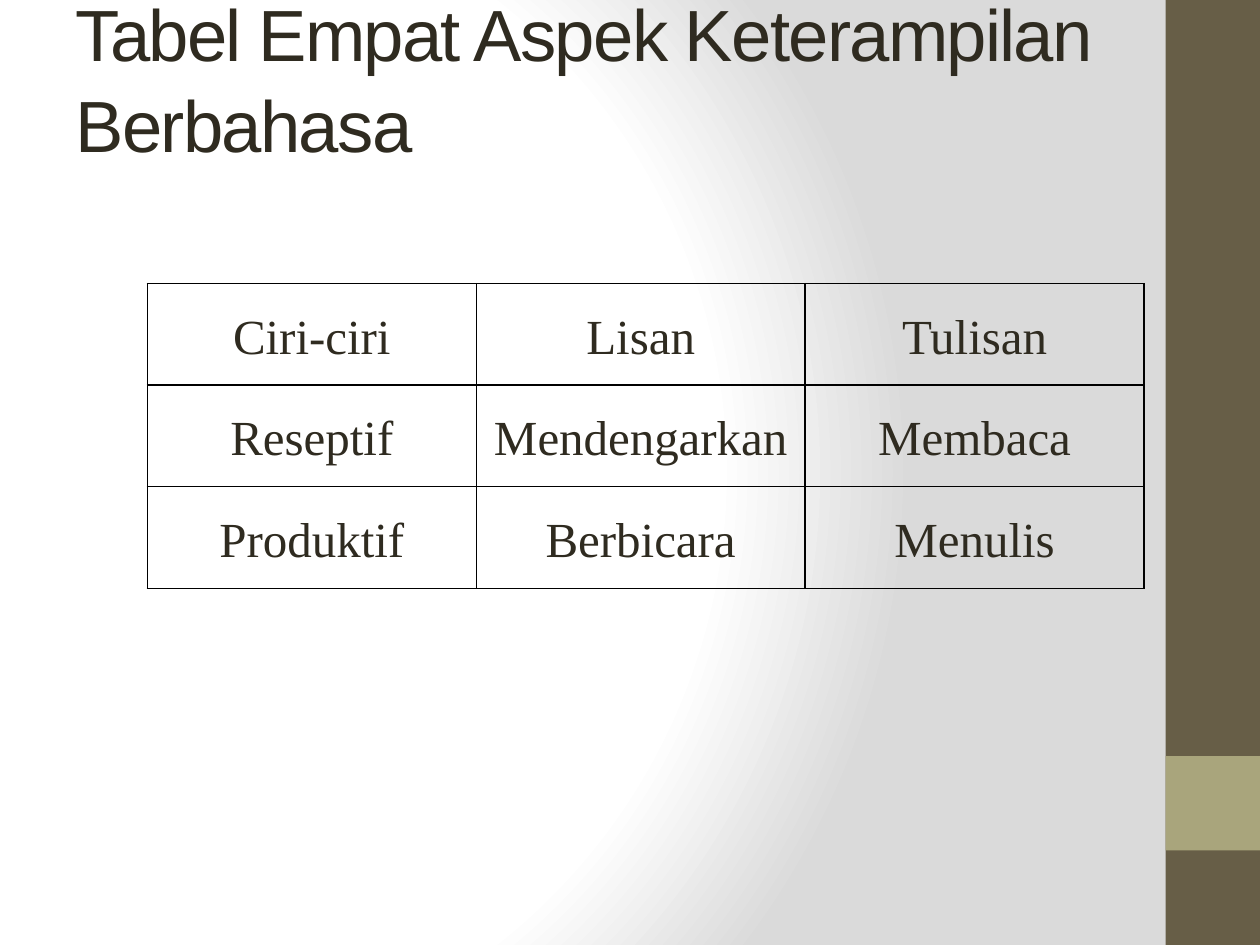
from dataclasses import dataclass

from lxml import etree
from pptx import Presentation
from pptx.dml.color import RGBColor
from pptx.enum.shapes import MSO_SHAPE
from pptx.enum.text import MSO_ANCHOR, PP_ALIGN
from pptx.oxml import parse_xml
from pptx.oxml.ns import qn
from pptx.util import Inches, Pt

RECT = MSO_SHAPE.RECTANGLE
MIDDLE = MSO_ANCHOR.MIDDLE
LEFT, CENTER = PP_ALIGN.LEFT, PP_ALIGN.CENTER
TITLE_ONLY = 5
SPACE = "http://schemas.openxmlformats.org/drawingml/2006/main"


@dataclass(frozen=True)
class Theme:
    ink: str = "2F2B20"
    band: str = "675E47"
    accent: str = "A9A57C"
    border: str = "000000"
    glow: tuple = ((0, "FFFFFF"), (75, "FFFFFF"), (100, "DADADA"))
    head: str = "Arial"
    body: str = "Times New Roman"
    head_size: float = 41.4
    body_size: float = 28


THEME = Theme()
ROWS = [
    ["Ciri-ciri", "Lisan", "Tulisan"],
    ["Reseptif", "Mendengarkan", "Membaca"],
    ["Produktif", "Berbicara", "Menulis"],
]


def set_font(para, name, size):
    font = para.font
    font.name, font.size = name, Pt(size)
    font.color.rgb = RGBColor.from_string(THEME.ink)


def add_glow(slide):
    fill = slide.background.fill
    fill.solid()
    stops = "".join(
        f'<a:gs pos="{pos * 1000}"><a:srgbClr val="{color}"/></a:gs>'
        for pos, color in THEME.glow
    )
    grad = parse_xml(
        f'<a:gradFill xmlns:a="{SPACE}" rotWithShape="1"><a:gsLst>{stops}</a:gsLst>'
        '<a:path path="circle">'
        '<a:fillToRect l="20000" t="50000" r="100000" b="50000"/>'
        "</a:path></a:gradFill>"
    )
    solid = next(slide.background._cSld.iter(qn("a:solidFill")))
    solid.getparent().replace(solid, grad)


def add_block(slide, left, top, width, height, color):
    block = slide.shapes.add_shape(
        RECT, Inches(left), Inches(top), Inches(width), Inches(height)
    )
    block.shadow.inherit = False
    block.fill.solid()
    block.fill.fore_color.rgb = RGBColor.from_string(color)
    block.line.fill.background()


def add_side(slide, left, top, width, height):
    add_block(slide, left, top, width, height, THEME.band)
    add_block(slide, left, top + height - 2 * width, width, width, THEME.accent)


def add_title(slide, left, top, width, height):
    title = slide.shapes.title
    title.left, title.top = Inches(left), Inches(top)
    title.width, title.height = Inches(width), Inches(height)
    frame = title.text_frame
    frame.text = "Tabel Empat Aspek Keterampilan Berbahasa"
    frame.word_wrap = True
    frame.vertical_anchor = MIDDLE
    frame.margin_bottom = Inches(0.7)
    para = frame.paragraphs[0]
    para.alignment, para.line_spacing = LEFT, 1.05
    set_font(para, THEME.head, THEME.head_size)
    para.runs[0].font._element.set("spc", "-100")


def add_border(cell):
    props = cell._tc.get_or_add_tcPr()
    for spot, side in enumerate(("lnL", "lnR", "lnT", "lnB")):
        line = etree.Element(qn(f"a:{side}"), w=str(Pt(1)))
        fill = etree.SubElement(line, qn("a:solidFill"))
        etree.SubElement(fill, qn("a:srgbClr"), val=THEME.border)
        props.insert(spot, line)


def fill_cell(cell, text):
    cell.text = text
    cell.fill.background()
    cell.margin_left = cell.margin_right = Inches(0.07)
    cell.margin_top = cell.margin_bottom = 0
    para = cell.text_frame.paragraphs[0]
    para.alignment, para.line_spacing = CENTER, 1.5
    set_font(para, THEME.body, THEME.body_size)
    add_border(cell)


def add_grid(slide, left, top, widths, height):
    table = slide.shapes.add_table(
        len(ROWS), len(widths), Inches(left), Inches(top),
        Inches(sum(widths)), Inches(height),
    ).table
    table.first_row = table.horz_banding = False
    for col, width in zip(table.columns, widths):
        col.width = Inches(width)
    for row, texts in zip(table.rows, ROWS):
        for cell, text in zip(row.cells, texts):
            fill_cell(cell, text)


def main():
    deck = Presentation()
    deck.slide_width, deck.slide_height = Inches(10), Inches(7.5)
    slide = deck.slides.add_slide(deck.slide_layouts[TITLE_ONLY])
    add_glow(slide)
    add_side(slide, 9.25, 0, 0.75, 7.5)
    add_title(slide, 0.5, 0.3, 8.33, 1.25)
    add_grid(slide, 1.17, 2.25, (2.61, 2.61, 2.69), 2.42)
    deck.save("out.pptx")


if __name__ == "__main__":
    main()
